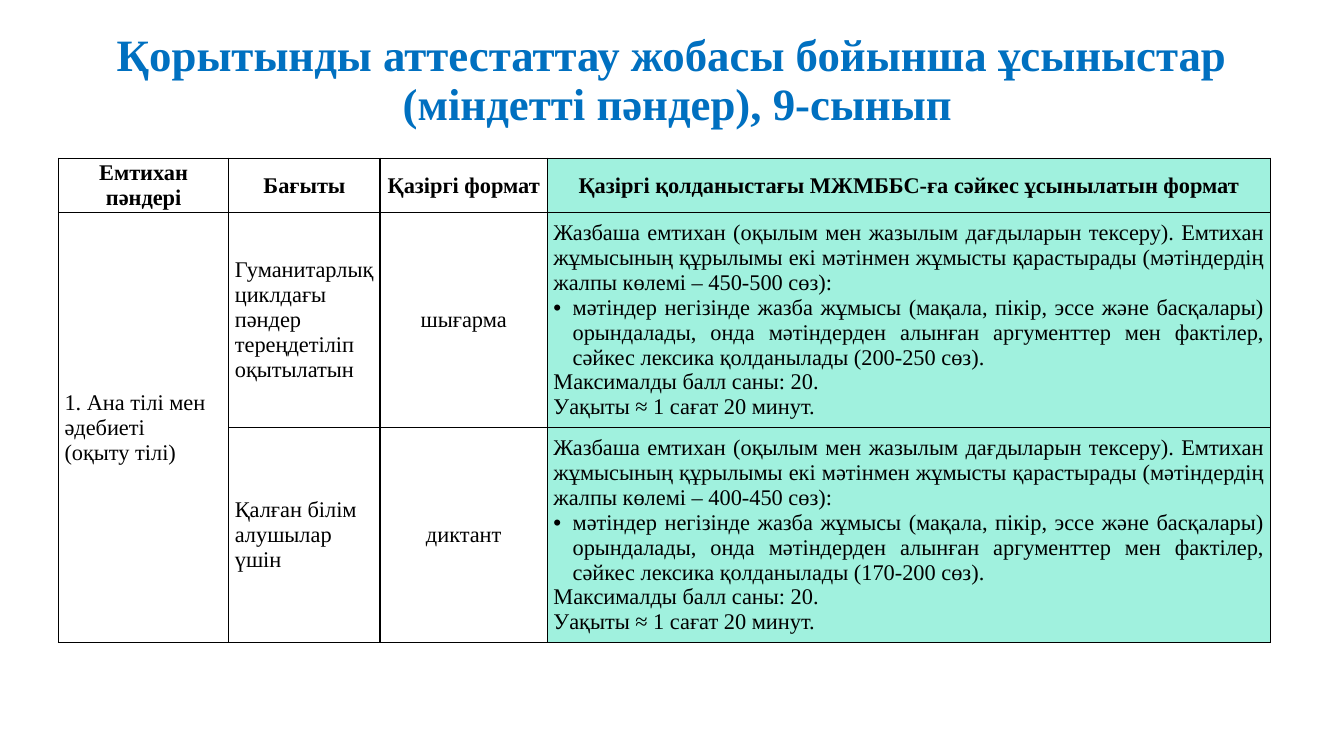
from lxml import etree
from pptx import Presentation
from pptx.dml.color import RGBColor
from pptx.enum.text import MSO_ANCHOR as Anchor, PP_ALIGN as Align
from pptx.oxml.ns import qn
from pptx.util import Inches, Pt

# Content
TITLE = "Қорытынды аттестаттау жобасы бойынша ұсыныстар \v(міндетті пәндер), 9-сынып"
HEADERS = ["Емтихан пәндері", "Бағыты", "Қазіргі формат",
           "Қазіргі қолданыстағы МЖМББС-ға сәйкес ұсынылатын формат"]
SUBJECT = ["1. Ана тілі мен әдебиеті", "(оқыту тілі)"]
# Direction, current format, total length of the texts, length of the written work
EXAMS = [
    ("Гуманитарлық циклдағы пәндер тереңдетіліп оқытылатын", "шығарма", "450-500", "200-250"),
    ("Қалған білім алушылар үшін", "диктант", "400-450", "170-200"),
]
BULLET = "•"
PROPOSAL = [
    "Жазбаша емтихан (оқылым мен жазылым дағдыларын тексеру). Емтихан жұмысының құрылымы "
    "екі мәтінмен жұмысты қарастырады (мәтіндердің жалпы көлемі – {total} сөз):",
    BULLET + "мәтіндер негізінде жазба жұмысы (мақала, пікір, эссе және басқалары) орындалады, "
    "онда мәтіндерден алынған аргументтер мен фактілер, сәйкес лексика қолданылады ({work} сөз).",
    "Максималды балл саны: 20.",
    "Уақыты ≈ 1 сағат 20 минут.",
]

# Format
FONT = "Times New Roman"
BLUE, BLACK, MINT = "0070C0", "000000", "A0F1DE"
COLUMN_WIDTHS = [1.69, 1.5, 1.66, 7.17]
ROW_HEIGHTS = [0.54, 1.89, 1.92]
COLUMN_ALIGNS = [Align.LEFT, Align.LEFT, Align.CENTER, Align.JUSTIFY]
HANGING = Inches(0.19)
CELL_FORMAT = {"margin_left": Inches(0.06), "margin_right": Inches(0.06),
               "margin_top": 0, "margin_bottom": 0, "vertical_anchor": Anchor.MIDDLE}
TITLE_FORMAT = {"word_wrap": True, "vertical_anchor": Anchor.TOP}


def color(hex_value):
    return RGBColor.from_string(hex_value)


def apply(target, values):
    for name, value in values.items():
        setattr(target, name, value)


def write(paragraph, text, size, hex_value, bold, align):
    paragraph.text = text
    paragraph.alignment = align
    for run in paragraph.runs:
        apply(run.font, {"name": FONT, "size": Pt(size), "bold": bold})
        run.font.color.rgb = color(hex_value)


def add_bullet(paragraph):
    properties = paragraph._p.get_or_add_pPr()
    properties.set("marL", str(HANGING))
    properties.set("indent", str(-HANGING))
    etree.SubElement(properties, qn("a:buFont"), typeface="Arial")
    etree.SubElement(properties, qn("a:buChar"), char=BULLET)


def add_borders(cell):
    properties = cell._tc.get_or_add_tcPr()
    for position, side in enumerate(("a:lnL", "a:lnR", "a:lnT", "a:lnB")):
        border = etree.Element(qn(side), w=str(Pt(1)))
        fill = etree.SubElement(border, qn("a:solidFill"))
        etree.SubElement(fill, qn("a:srgbClr"), val=BLACK)
        properties.insert(position, border)


def fill_cell(cell, lines, bold, align, fill):
    apply(cell, CELL_FORMAT)
    if fill:
        cell.fill.solid()
        cell.fill.fore_color.rgb = color(fill)
    else:
        cell.fill.background()
    add_borders(cell)
    frame = cell.text_frame
    for number, line in enumerate(lines):
        paragraph = frame.add_paragraph() if number else frame.paragraphs[0]
        write(paragraph, line.removeprefix(BULLET), 16, BLACK, bold, align)
        if line.startswith(BULLET):
            add_bullet(paragraph)


def main():
    deck = Presentation()
    apply(deck, {"slide_width": Inches(13.33), "slide_height": Inches(7.5)})
    slide = deck.slides.add_slide(deck.slide_layouts[6])

    # Title
    title = slide.shapes.add_textbox(Inches(0.45), Inches(0.28), Inches(12.54), Inches(0.67))
    apply(title.text_frame, TITLE_FORMAT)
    heading = title.text_frame.paragraphs[0]
    write(heading, TITLE, 32, BLUE, True, Align.CENTER)
    heading.line_spacing = 0.9

    # Table rows
    rows = [[[header] for header in HEADERS]]
    for number, (direction, current, total, work) in enumerate(EXAMS):
        proposal = [line.format(total=total, work=work) for line in PROPOSAL]
        rows.append([[] if number else SUBJECT, [direction], [current], proposal])

    # Table
    exams = slide.shapes.add_table(
        len(rows), len(HEADERS), Inches(0.58), Inches(1.57),
        Inches(sum(COLUMN_WIDTHS)), Inches(sum(ROW_HEIGHTS))).table
    apply(exams, {"first_row": False, "horz_banding": False})
    for column, width in zip(exams.columns, COLUMN_WIDTHS):
        column.width = Inches(width)
    for row, height in zip(exams.rows, ROW_HEIGHTS):
        row.height = Inches(height)
    for r, row in enumerate(rows):
        for c, lines in enumerate(row):
            is_header = r == 0
            align = Align.CENTER if is_header else COLUMN_ALIGNS[c]
            fill = MINT if c == len(HEADERS) - 1 else None
            fill_cell(exams.cell(r, c), lines, is_header, align, fill)
    exams.cell(1, 0).merge(exams.cell(len(EXAMS), 0))

    deck.save("out.pptx")


if __name__ == "__main__":
    main()
